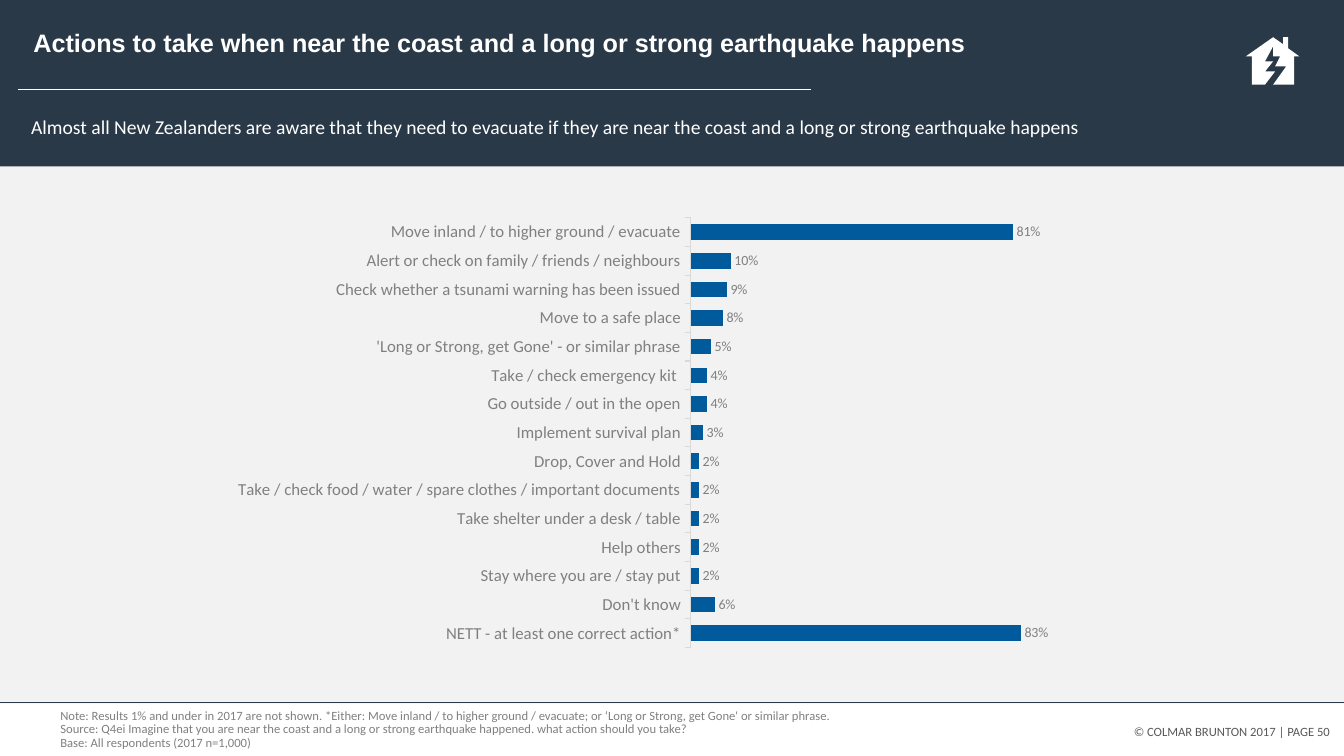
from dataclasses import dataclass

import pptx
import pptx.chart.data
import pptx.dml.color
import pptx.enum.chart
import pptx.enum.shapes
import pptx.enum.text
import pptx.oxml
import pptx.oxml.ns
import pptx.util

Pt = pptx.util.Pt
RGBColor = pptx.dml.color.RGBColor
PP_ALIGN = pptx.enum.text.PP_ALIGN
MSO_ANCHOR = pptx.enum.text.MSO_ANCHOR

WHITE = RGBColor(0xFF, 0xFF, 0xFF)
LIGHT = RGBColor(0xF2, 0xF2, 0xF2)
NAVY = RGBColor(0x2A, 0x39, 0x47)
BLUE = RGBColor(0x01, 0x5A, 0x9C)
GREY = RGBColor(0x80, 0x80, 0x80)
DARK_GREY = RGBColor(0x59, 0x59, 0x59)
AXIS_GREY = RGBColor(0xD9, 0xD9, 0xD9)
BLACK = RGBColor(0, 0, 0)
WIDTH, HEIGHT = 960, 540


@dataclass(frozen=True)
class Band:
    top: float
    height: float
    color: RGBColor


@dataclass(frozen=True)
class Rule:
    left: float
    right: float
    y: float
    color: RGBColor


@dataclass(frozen=True)
class Label:
    box: tuple[float, float, float, float]
    lines: tuple[str, ...]
    size: float
    color: RGBColor
    font: str = "Calibri"
    bold: bool = False
    align: PP_ALIGN = PP_ALIGN.LEFT
    anchor: MSO_ANCHOR = MSO_ANCHOR.MIDDLE
    spacing: float = 0.9


@dataclass(frozen=True)
class Action:
    name: str
    share: float


BANDS = [
    Band(86.4, 416.2, LIGHT),
    Band(0, 118.8, NAVY),
    Band(518.4, 21.6, WHITE),
]
RULES = [Rule(0, WIDTH, 501.8, NAVY), Rule(13, 579.6, 64.1, WHITE)]

TITLE = Label(
    (16.6, 5.8, 736.6, 51.8),
    ("Actions to take when near the coast and a long or strong earthquake happens",),
    18, WHITE, font="Arial", bold=True)
LABELS = [
    Label((673.2, 513.4, 283.7, 18), ("© COLMAR BRUNTON 2017 | PAGE 50",), 9, DARK_GREY,
          align=PP_ALIGN.RIGHT, anchor=MSO_ANCHOR.TOP, spacing=1.0),
    Label((15.1, 68.4, 811.4, 46.1),
          ("Almost all New Zealanders are aware that they need to evacuate if they are "
           "near the coast and a long or strong earthquake happens",), 14, WHITE),
    Label((36, 511.9, 611.3, 18.7),
          ("Note: Results 1% and under in 2017 are not shown. *Either: Move inland / to higher "
           "ground / evacuate; or ‘Long or Strong, get Gone' or similar phrase.",
           "Source: Q4ei Imagine that you are near the coast and a long or strong earthquake "
           "happened. what action should you take?",
           "Base: All respondents (2017 n=1,000)"), 9, GREY),
]

ACTIONS = [
    Action("Move inland / to higher ground / evacuate", 0.81),
    Action("Alert or check on family / friends / neighbours", 0.10),
    Action("Check whether a tsunami warning has been issued", 0.09),
    Action("Move to a safe place", 0.08),
    Action("'Long or Strong, get Gone' - or similar phrase", 0.05),
    Action("Take / check emergency kit ", 0.04),
    Action("Go outside / out in the open", 0.04),
    Action("Implement survival plan", 0.03),
    Action("Drop, Cover and Hold", 0.02),
    Action("Take / check food / water / spare clothes / important documents", 0.02),
    Action("Take shelter under a desk / table", 0.02),
    Action("Help others", 0.02),
    Action("Stay where you are / stay put", 0.02),
    Action("Don't know", 0.06),
    Action("NETT - at least one correct action*", 0.83),
]

HOUSE = [
    (920.2, 34.6), (920.2, 26.6), (916.6, 26.6), (916.6, 31.7), (909.4, 26.6), (889.9, 40.3),
    (894.2, 40.3), (894.2, 60.5), (903.6, 60.5), (910.8, 51.1), (903.6, 51.1), (909.4, 43.9),
    (903.6, 43.9), (909.4, 33.1), (909.4, 40.3), (914.4, 40.3), (910.8, 47.5), (918.7, 47.5),
    (909.4, 60.5), (924.5, 60.5), (924.5, 40.3), (928.1, 40.3),
]


def paint(sp: pptx.shapes.autoshape.Shape, color: RGBColor) -> None:
    sp.shadow.inherit = False
    sp.fill.solid()
    sp.fill.fore_color.rgb = color
    sp.line.fill.background()


def style_font(font: pptx.text.text.Font, size: float, color: RGBColor,
               name: str = "Calibri") -> None:
    font.name = name
    font.size = Pt(size)
    font.color.rgb = color


def add_band(s: pptx.slide.Slide, band: Band) -> None:
    sp = s.shapes.add_shape(pptx.enum.shapes.MSO_SHAPE.RECTANGLE,
                            Pt(0), Pt(band.top), Pt(WIDTH), Pt(band.height))
    paint(sp, band.color)


def add_rule(s: pptx.slide.Slide, rule: Rule) -> None:
    line = s.shapes.add_connector(pptx.enum.shapes.MSO_CONNECTOR.STRAIGHT,
                                  Pt(rule.left), Pt(rule.y), Pt(rule.right), Pt(rule.y))
    line.line.color.rgb = rule.color
    line.line.width = Pt(0.5)
    line.element.spPr.append(pptx.oxml.parse_xml(
        f'<a:effectLst {pptx.oxml.ns.nsdecls("a")}/>'))


def write_label(sp: pptx.shapes.autoshape.Shape, label: Label) -> None:
    sp.left, sp.top, sp.width, sp.height = (Pt(v) for v in label.box)
    tf = sp.text_frame
    tf.word_wrap = True
    tf.auto_size = pptx.enum.text.MSO_AUTO_SIZE.NONE
    tf.vertical_anchor = label.anchor
    for i, line in enumerate(label.lines):
        p = tf.add_paragraph() if i else tf.paragraphs[0]
        p.alignment = label.align
        p.line_spacing = label.spacing
        p.space_before = Pt(0)
        r = p.add_run()
        r.text = line
        style_font(r.font, label.size, label.color, label.font)
        r.font.bold = label.bold


def add_actions_chart(s: pptx.slide.Slide) -> None:
    data = pptx.chart.data.CategoryChartData(number_format="0%")
    data.categories = [a.name for a in ACTIONS]
    data.add_series("Series 1", [a.share for a in ACTIONS])
    chart = s.shapes.add_chart(pptx.enum.chart.XL_CHART_TYPE.BAR_CLUSTERED,
                               Pt(89.3), Pt(143.3), Pt(821.5), Pt(331.9), data).chart
    chart.has_legend = False
    chart.has_title = False
    style_font(chart.font, 10, BLACK)

    cats = chart.category_axis
    cats.reverse_order = True
    cats.major_tick_mark = pptx.enum.chart.XL_TICK_MARK.OUTSIDE
    cats.format.line.color.rgb = AXIS_GREY
    cats.format.line.width = Pt(0.75)
    style_font(cats.tick_labels.font, 12, GREY)
    vals = chart.value_axis
    vals.minimum_scale, vals.maximum_scale = 0, 0.9
    vals.has_major_gridlines = False
    vals.visible = False

    plot = chart.plots[0]
    plot.gap_width = 84
    plot.vary_by_categories = False
    fill = plot.series[0].format.fill
    fill.solid()
    fill.fore_color.rgb = BLUE
    plot.has_data_labels = True
    labels = plot.data_labels
    labels.show_value = True
    labels.number_format = "0%"
    labels.number_format_is_linked = False
    labels.position = pptx.enum.chart.XL_LABEL_POSITION.OUTSIDE_END
    style_font(labels.font, 10, GREY)
    fix_plot_area(chart, x=0.492, y=0.037, w=0.311, h=0.925)


def fix_plot_area(chart: pptx.chart.chart.Chart, **shares: float) -> None:
    """Pin the inner plot area to the given shares of the chart."""
    area = chart.element.find(".//" + pptx.oxml.ns.qn("c:plotArea"))
    for old in area.findall(pptx.oxml.ns.qn("c:layout")):
        area.remove(old)
    modes = "".join(f'<c:{k}Mode val="edge"/>' for k in "xy")
    sizes = "".join(f'<c:{k} val="{v}"/>' for k, v in shares.items())
    area.insert(0, pptx.oxml.parse_xml(
        f'<c:layout {pptx.oxml.ns.nsdecls("c")}><c:manualLayout>'
        f'<c:layoutTarget val="inner"/>{modes}{sizes}</c:manualLayout></c:layout>'))


def add_house(s: pptx.slide.Slide) -> None:
    start, *rest = [(Pt(x), Pt(y)) for x, y in HOUSE]
    builder = s.shapes.build_freeform(*start)
    builder.add_line_segments(rest, close=True)
    paint(builder.convert_to_shape(), WHITE)


def main() -> None:
    prs = pptx.Presentation()
    prs.slide_width, prs.slide_height = Pt(WIDTH), Pt(HEIGHT)
    s = prs.slides.add_slide(prs.slide_layouts[5])
    for band in BANDS:
        add_band(s, band)
    for rule in RULES:
        add_rule(s, rule)
    title = s.shapes.title
    title.element.getparent().append(title.element)
    write_label(title, TITLE)
    for label in LABELS:
        write_label(s.shapes.add_textbox(*(Pt(v) for v in label.box)), label)
    add_actions_chart(s)
    add_house(s)
    prs.save("out.pptx")


if __name__ == "__main__":
    main()
